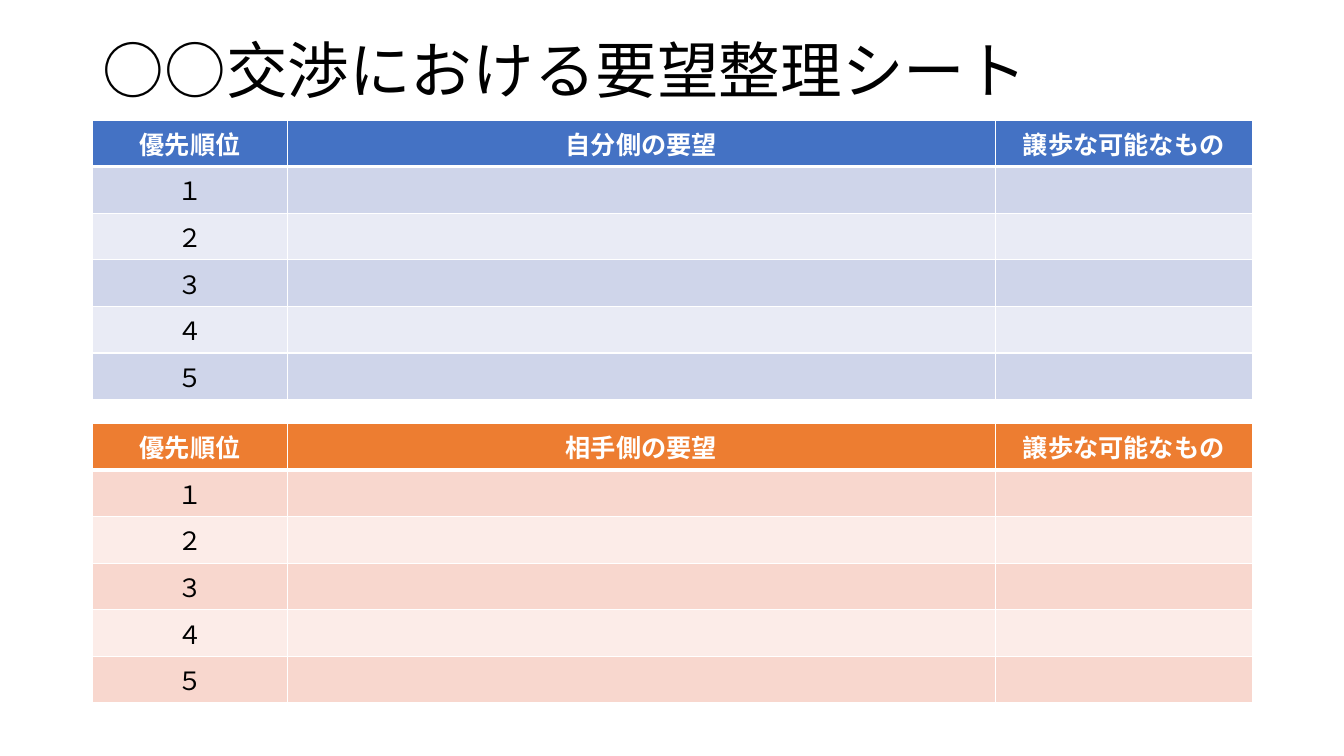
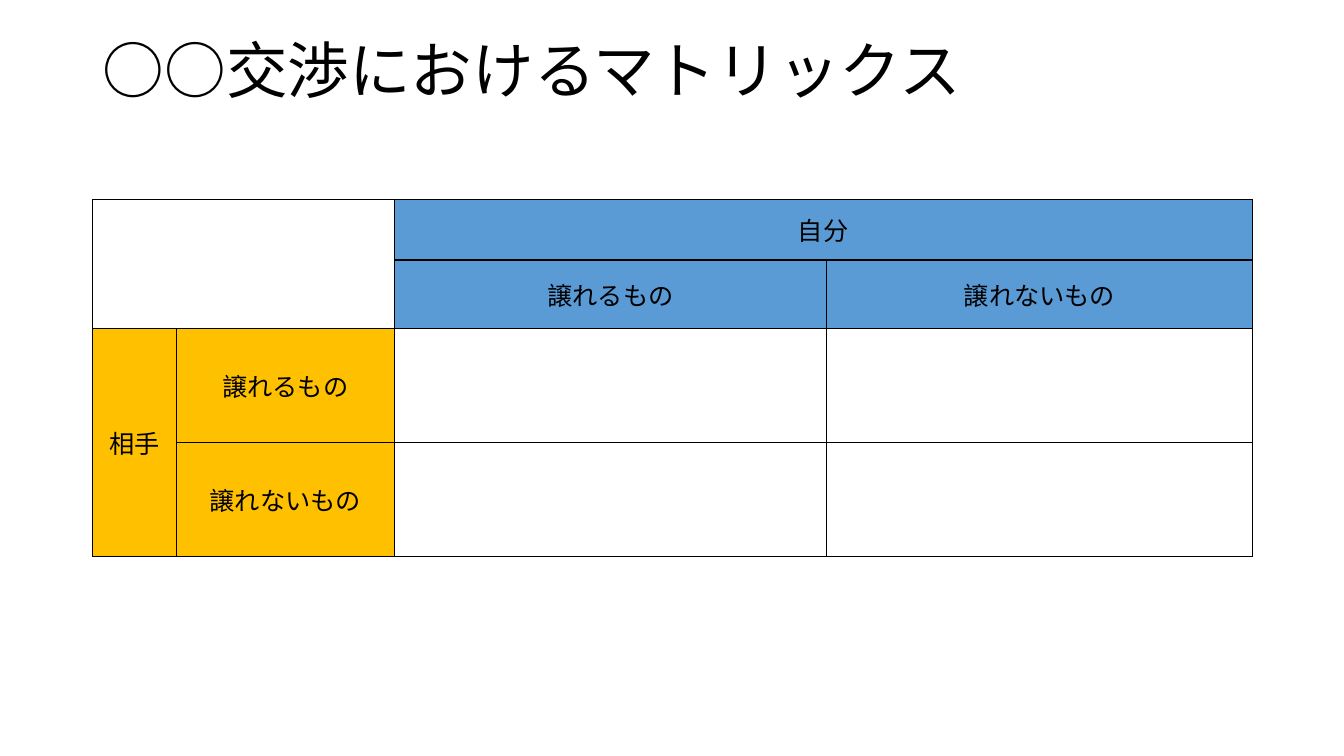
import pptx
import pptx.util
import pptx.dml.color
import pptx.enum.text
import pptx.oxml.ns
from lxml import etree

Inches = pptx.util.Inches
Pt = pptx.util.Pt
PP_ALIGN = pptx.enum.text.PP_ALIGN
MSO_ANCHOR = pptx.enum.text.MSO_ANCHOR
qn = pptx.oxml.ns.qn

FONT = "Noto Sans CJK JP"
LEFT, WIDTH = 0.92, 11.5
COLORS = {
    "black": "000000",
    "white": "FFFFFF",
    "own_header": "4472C4",
    "own_dark": "CFD5EA",
    "own_light": "E9EBF5",
    "other_header": "ED7D31",
    "other_dark": "F8D7CE",
    "other_light": "FCECE8",
    "matrix_own": "5B9BD5",
    "matrix_other": "FFC000",
}


def rgb(color):
    return pptx.dml.color.RGBColor.from_string(COLORS[color])


def format_text(paragraph, size, color, align, bold=False):
    paragraph.alignment = align
    for run in paragraph.runs:
        run.font.name = FONT
        run.font.size = Pt(size)
        run.font.bold = bold
        run.font.color.rgb = rgb(color)
        east_asian = etree.SubElement(run.font._element, qn("a:ea"))
        east_asian.set("typeface", FONT)


def set_borders(cell, color, bottom_width=1):
    properties = cell._tc.get_or_add_tcPr()
    for side in "LRTB":
        width = bottom_width if side == "B" else 1
        line = etree.SubElement(properties, qn(f"a:ln{side}"), w=str(Pt(width)))
        fill = etree.SubElement(line, qn("a:solidFill"))
        etree.SubElement(fill, qn("a:srgbClr"), val=COLORS[color])


def fill_cell(cell, text, fill, color, bold=False, anchor=MSO_ANCHOR.TOP):
    cell.fill.solid()
    cell.fill.fore_color.rgb = rgb(fill)
    cell.vertical_anchor = anchor
    if text:
        cell.text_frame.text = text
        format_text(cell.text_frame.paragraphs[0], 18, color, PP_ALIGN.CENTER, bold)


def add_titled_slide(prs, title):
    slide = prs.slides.add_slide(prs.slide_layouts[5])
    heading = slide.shapes.title
    heading.left, heading.top = Inches(LEFT), Inches(0)
    heading.width, heading.height = Inches(WIDTH), Inches(1.45)
    frame = heading.text_frame
    frame.text = title
    frame.word_wrap = True
    frame.auto_size = pptx.enum.text.MSO_AUTO_SIZE.NONE
    frame.vertical_anchor = MSO_ANCHOR.MIDDLE
    frame.paragraphs[0].line_spacing = 0.9
    format_text(frame.paragraphs[0], 44, "black", PP_ALIGN.LEFT)
    return slide


def add_grid(slide, top, columns, rows):
    grid = slide.shapes.add_table(
        len(rows), len(columns), Inches(LEFT), Inches(top),
        Inches(WIDTH), Inches(sum(rows))).table
    grid.first_row = False
    grid.horz_banding = False
    for column, width in zip(grid.columns, columns):
        column.width = Inches(width)
    for row, height in zip(grid.rows, rows):
        row.height = Inches(height)
    return grid


def add_request_table(slide, top, request_heading, side):
    headings = ["優先順位", request_heading, "譲歩な可能なもの"]
    entries = [headings] + [[rank, "", ""] for rank in "１２３４５"]
    requests = add_grid(slide, top, [1.93, 7.02, 2.55], [0.46] * len(entries))
    for r, entry in enumerate(entries):
        is_header = r == 0
        shade = "header" if is_header else "dark" if r % 2 else "light"
        for c, text in enumerate(entry):
            cell = requests.cell(r, c)
            set_borders(cell, "white", 3 if is_header else 1)
            fill_cell(cell, text, f"{side}_{shade}",
                      "white" if is_header else "black", is_header)


def add_negotiation_matrix(slide):
    can_yield, cannot_yield = "譲れるもの", "譲れないもの"
    entries = [
        ["", "", "自分", ""],
        ["", "", can_yield, cannot_yield],
        ["相手", can_yield, "", ""],
        ["", cannot_yield, "", ""],
    ]
    matrix = add_grid(slide, 1.98, [0.83, 2.16, 4.29, 4.22], [0.6, 0.68, 1.13, 1.13])
    for r, entry in enumerate(entries):
        for c, text in enumerate(entry):
            own, other = r < 2 <= c, c < 2 <= r
            fill = "matrix_own" if own else "matrix_other" if other else "white"
            cell = matrix.cell(r, c)
            set_borders(cell, "black")
            fill_cell(cell, text, fill, "black", anchor=MSO_ANCHOR.MIDDLE)
    for first, last in [((0, 0), (1, 1)), ((0, 2), (0, 3)), ((2, 0), (3, 0))]:
        matrix.cell(*first).merge(matrix.cell(*last))


def main():
    prs = pptx.Presentation()
    prs.slide_width, prs.slide_height = Inches(13.33), Inches(7.5)

    request_sheet = add_titled_slide(prs, "○○交渉における要望整理シート")
    add_request_table(request_sheet, 1.19, "自分側の要望", "own")
    add_request_table(request_sheet, 4.2, "相手側の要望", "other")

    matrix_sheet = add_titled_slide(prs, "○○交渉におけるマトリックス")
    add_negotiation_matrix(matrix_sheet)

    prs.save("out.pptx")


if __name__ == "__main__":
    main()
